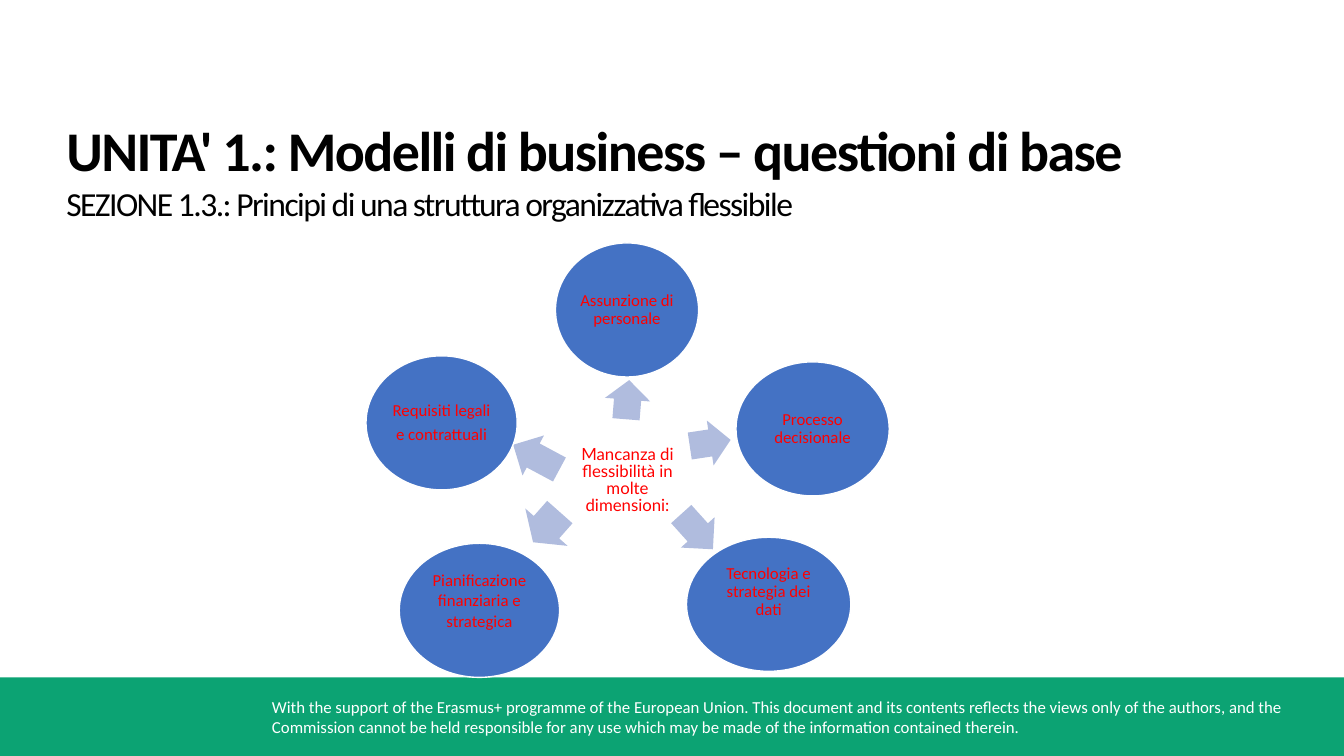
from dataclasses import dataclass

import pptx
import pptx.dml.color
import pptx.enum.shapes
import pptx.enum.text
import pptx.util

Pt = pptx.util.Pt
Shapes = pptx.enum.shapes.MSO_SHAPE
Align = pptx.enum.text.PP_ALIGN
Anchor = pptx.enum.text.MSO_ANCHOR


@dataclass(frozen=True)
class Theme:
    black: str = "000000"
    white: str = "FFFFFF"
    green: str = "0CA373"
    blue: str = "4472C4"
    pale_blue: str = "B0BCDE"
    red: str = "FF0000"
    body_font: str = "Calibri"
    hub_font: str = "Lato"
    title_size: int = 40
    section_size: int = 24
    small_size: int = 12


THEME = Theme()


@dataclass(frozen=True)
class Box:
    left: float
    top: float
    width: float
    height: float

    def inner(self, left, top, width, height):
        """Return an inner box given in percent of this one."""
        return Box(self.left + self.width * left / 100, self.top + self.height * top / 100,
                   self.width * width / 100, self.height * height / 100)

    def centred(self, middle_x, middle_y, width, height):
        """Return an inner box given by its centre and size in percent."""
        return self.inner(middle_x - width / 2, middle_y - height / 2, width, height)

    def place(self):
        return [round(length) for length in (self.left, self.top, self.width, self.height)]


@dataclass(frozen=True)
class Spoke:
    """One circle and the arrow to it, in percent of the wheel."""
    lines: tuple
    circle: tuple  # centre x, centre y, width
    arrow: tuple  # centre x, centre y, width, height
    angle: float
    lift: float = 0.02  # bottom inset in inches
    line_spacing: float = 0.9


CIRCLE_HEIGHT = 30.86
SPOKES = [
    Spoke(("Assunzione di personale",), (49.9, 15.43, 27.36), (50, 36.08, 7.51, 10.44), 274.6),
    Spoke(("Processo decisionale",), (85.36, 42.81, 29.29), (65.8, 46.06, 7.9, 10.44), 351.5),
    Spoke(("Tecnologia e strategia dei dati",), (76.97, 83.18, 31.41),
          (63.29, 66.47, 9.06, 10.44), 48, lift=0.27),
    Spoke(("Pianificazione finanziaria e strategica",), (21.68, 84.57, 30.64),
          (34.49, 65.43, 7.71, 12.99), 131.5, lift=0.22, line_spacing=1),
    Spoke(("Requisiti legali", "e contrattuali"), (14.45, 41.42, 28.9),
          (32.56, 49.3, 10.02, 10.44), 208.2),
]


def colour(code):
    return pptx.dml.color.RGBColor.from_string(code)


def style(para, size, code, name=THEME.body_font, bold=False):
    para.font.size = Pt(size)
    para.font.name = name
    para.font.bold = bold
    para.font.color.rgb = colour(code)


def add_filled(page, kind, box, fill):
    shape = page.shapes.add_shape(kind, *box.place())
    shape.shadow.inherit = False
    shape.fill.solid()
    shape.fill.fore_color.rgb = colour(fill)
    shape.line.fill.background()
    return shape


def add_text(page, box, lines):
    """Add a wrapping text box and return its paragraphs."""
    frame = page.shapes.add_textbox(*box.place()).text_frame
    frame.word_wrap = True
    frame.text = "\n".join(lines)
    return frame.paragraphs


def add_footer(page, box):
    add_filled(page, Shapes.RECTANGLE, box, THEME.green)
    para, = add_text(page, box.inner(19.5, 17.95, 78.17, 64.1), [
        "With the support of the Erasmus+ programme of the European Union. "
        "This document and its contents reflects the views only of the authors, "
        "and the Commission cannot be held responsible for any use which may be "
        "made of the information contained therein."])
    style(para, THEME.small_size, THEME.white)


def add_heading(page, box):
    title, section = add_text(page, box, [
        "UNITA' 1.: Modelli di business – questioni di base",
        "SEZIONE 1.3.: Principi di una struttura organizzativa flessibile"])
    style(title, THEME.title_size, THEME.black, bold=True)
    style(section, THEME.section_size, THEME.black)
    for para in (title, section):
        for span in para.runs:
            span.font._element.set("spc", "-110")


def add_spoke(page, wheel, spoke):
    arrow = add_filled(page, Shapes.RIGHT_ARROW, wheel.centred(*spoke.arrow), THEME.pale_blue)
    arrow.adjustments[0] = 0.6
    arrow.adjustments[1] = 0.5
    arrow.rotation = spoke.angle

    circle = add_filled(page, Shapes.OVAL, wheel.centred(*spoke.circle, CIRCLE_HEIGHT), THEME.blue)
    circle.line.color.rgb = colour(THEME.white)
    circle.line.width = Pt(1)
    frame = circle.text_frame
    frame.word_wrap = True
    frame.vertical_anchor = Anchor.MIDDLE
    frame.margin_left = frame.margin_right = frame.margin_top = pptx.util.Inches(0.02)
    frame.margin_bottom = pptx.util.Inches(spoke.lift)
    frame.text = "\n".join(spoke.lines)
    for para in frame.paragraphs:
        para.alignment = Align.CENTER
        para.line_spacing = spoke.line_spacing
        para.space_after = Pt(4.2)
        style(para, THEME.small_size, THEME.red)


def add_wheel(page, box):
    for spoke in SPOKES:
        add_spoke(page, box, spoke)
    hub, = add_text(page, box.centred(50, 54.99, 25.63, 18.1),
                    ["Mancanza di flessibilità in molte dimensioni:"])
    hub.alignment = Align.CENTER
    hub.line_spacing = Pt(12.1)
    style(hub, THEME.small_size, THEME.red, THEME.hub_font)


def main():
    deck = pptx.Presentation()
    deck.slide_width = pptx.util.Inches(13.33)
    deck.slide_height = pptx.util.Inches(7.5)
    page = deck.slides.add_slide(deck.slide_layouts[6])
    whole = Box(0, 0, deck.slide_width, deck.slide_height)
    add_footer(page, whole.inner(0, 89.6, 100, 10.4))
    add_heading(page, whole.inner(4.2, 14.67, 95.8, 15.73))
    add_wheel(page, whole.inner(27.23, 32.13, 38.93, 57.47))
    deck.save("out.pptx")


if __name__ == "__main__":
    main()
